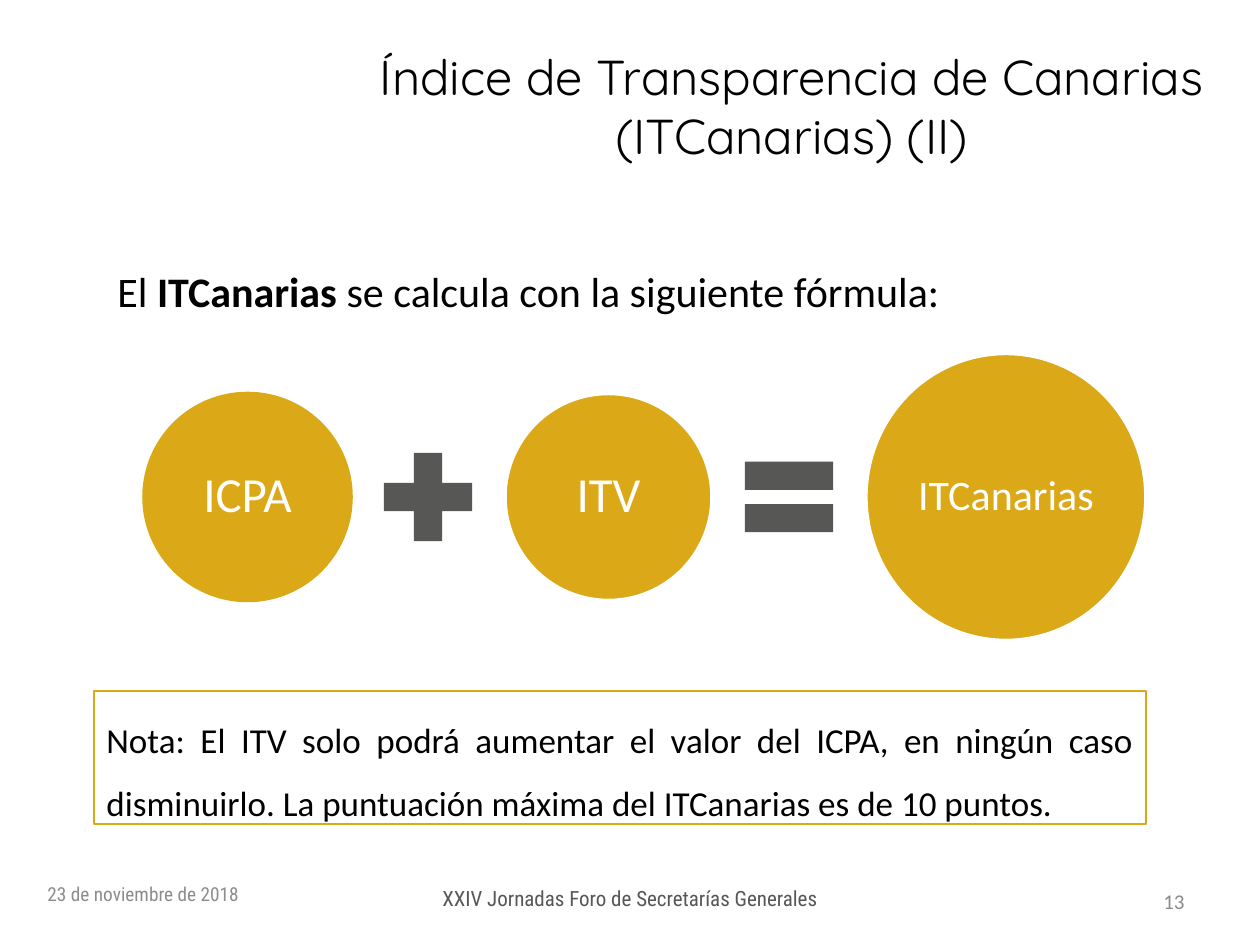
from pptx import Presentation
from pptx.dml.color import RGBColor
from pptx.enum.shapes import MSO_SHAPE
from pptx.enum.text import MSO_ANCHOR, PP_ALIGN
from pptx.util import Pt

OVAL, PLUS, EQUAL, RECT = (MSO_SHAPE.OVAL, MSO_SHAPE.MATH_PLUS,
                           MSO_SHAPE.MATH_EQUAL, MSO_SHAPE.RECTANGLE)
LEFT, CENTER, RIGHT, JUSTIFY = (PP_ALIGN.LEFT, PP_ALIGN.CENTER,
                                PP_ALIGN.RIGHT, PP_ALIGN.JUSTIFY)
TOP, MIDDLE = MSO_ANCHOR.TOP, MSO_ANCHOR.MIDDLE
PX = 914400 / 126
COLORS = {"gold": "DBA817", "gray": "575756", "white": "FFFFFF", "black": "000000",
          "date": "8C8C8C", "number": "8B8B8B"}


def emu(*lengths):
    return [round(length * PX) for length in lengths]


def write(box, text, size, font="Calibri", color="black", align=LEFT,
          anchor=TOP, spacing=None, inset=None, bold=""):
    """Fill a box with one paragraph; the part equal to bold is set in bold."""
    frame = box.text_frame
    frame.word_wrap = True
    frame.vertical_anchor = anchor
    if inset is not None:
        (frame.margin_left, frame.margin_top,
         frame.margin_right, frame.margin_bottom) = emu(*[inset] * 4)
    para = frame.paragraphs[0]
    para.alignment = align
    if spacing:
        para.line_spacing = spacing
    before, match, after = text.partition(bold) if bold else (text, "", "")
    for part in (before, match, after):
        if part:
            span = para.add_run()
            span.text = part
            span.font.name = font
            span.font.size = Pt(size)
            span.font.bold = part == bold
            span.font.color.rgb = RGBColor.from_string(COLORS[color])


deck = Presentation()
deck.slide_width, deck.slide_height = emu(1260, 945)
page = deck.slides.add_slide(deck.slide_layouts[6])

# Title, introduction and footer
texts = [
    ((323, 26, 937, 158), "Índice de Transparencia de Canarias (ITCanarias) (II)",
     dict(size=28, font="Quicksand", align=CENTER, anchor=MIDDLE)),
    ((105, 234, 1081, 140), "El ITCanarias se calcula con la siguiente fórmula:",
     dict(size=24, align=JUSTIFY, spacing=1.5, bold="ITCanarias")),
    ((35, 869, 294, 50), "23 de noviembre de 2018",
     dict(size=11, font="Roboto Condensed", color="date", anchor=MIDDLE)),
    ((382, 879, 496, 39), "XXIV Jornadas Foro de Secretarías Generales",
     dict(size=12, font="Roboto Condensed", color="gray", align=CENTER)),
    ((1126, 876, 71, 50), "13",
     dict(size=12, color="number", align=RIGHT, anchor=MIDDLE)),
]
for place, text, style in texts:
    write(page.shapes.add_textbox(*emu(*place)), text, **style)

# Formula: every part is centred on one horizontal axis
AXIS = 497
formula = [
    (OVAL, 144, 207, 207, "ICPA", 28, "gold"),
    (PLUS, 368, 120, 120, "", 0, None),
    (OVAL, 505, 207, 207, "ITV", 28, "white"),
    (EQUAL, 729, 120, 120, "", 0, None),
    (OVAL, 866, 280, 287, "ITCanarias", 24, "white"),
]
for kind, left, width, height, label, size, outline in formula:
    part = page.shapes.add_shape(kind, *emu(left, AXIS - height / 2, width, height))
    part.shadow.inherit = False
    part.fill.solid()
    part.fill.fore_color.rgb = RGBColor.from_string(COLORS["gold" if label else "gray"])
    if label:
        part.line.color.rgb = RGBColor.from_string(COLORS[outline])
        part.line.width = Pt(2)
        write(part, label, size, color="white", align=CENTER, anchor=MIDDLE,
              spacing=0.9, inset=4)
    else:
        part.line.fill.background()

# Framed note
note = page.shapes.add_shape(RECT, *emu(94, 691, 1052, 133))
note.shadow.inherit = False
note.fill.background()
note.line.color.rgb = RGBColor.from_string(COLORS["gold"])
note.line.width = Pt(1)
write(note, "Nota: El ITV solo podrá aumentar el valor del ICPA, en ningún caso "
      "disminuirlo. La puntuación máxima del ITCanarias es de 10 puntos.",
      20, align=JUSTIFY, spacing=1.5)

deck.save("out.pptx")
